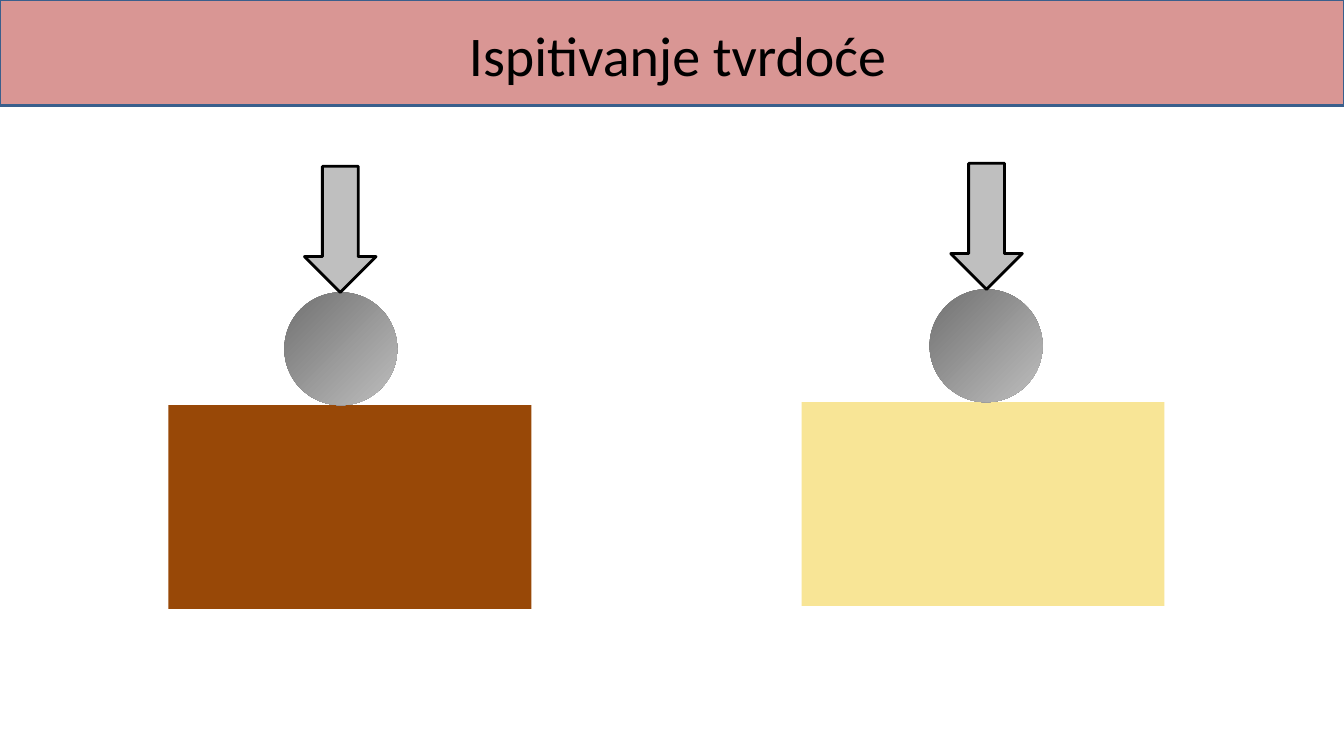
from pptx import Presentation
from pptx.dml.color import RGBColor
from pptx.enum import shapes, text
from pptx.util import Inches, Pt

KIND = shapes.MSO_SHAPE


def color(code):
    return RGBColor.from_string(code)


def draw(kind, left, top, width, height, fill=None, line=None):
    """Add a shape; without a fill code its fill is left to the caller."""
    shape = slide.shapes.add_shape(
        kind, Inches(left), Inches(top), Inches(width), Inches(height))
    shape.shadow.inherit = False
    if fill:
        shape.fill.solid()
        shape.fill.fore_color.rgb = color(fill)
    if line:
        shape.line.color.rgb = color(line)
        shape.line.width = Pt(2)
    else:
        shape.line.fill.background()
    return shape


deck = Presentation()
deck.slide_width = Inches(13.33)
deck.slide_height = Inches(7.5)
slide = deck.slides.add_slide(deck.slide_layouts[6])

# Title band
draw(KIND.RECTANGLE, 0, 0, 13.33, 1.05, "D99694", "3A5F8C")
title = slide.shapes.add_textbox(Inches(0.97), 0, Inches(11.5), Inches(1.07))
frame = title.text_frame
frame.word_wrap = True
frame.vertical_anchor = text.MSO_ANCHOR.MIDDLE
para = frame.paragraphs[0]
para.alignment = text.PP_ALIGN.CENTER
run = para.add_run()
run.text = "Ispitivanje tvrdoće"
run.font.name = "Calibri"
run.font.size = Pt(40)
run.font.color.rgb = color("000000")

# Two hardness tests: an arrow presses a ball onto a block
tests = [
    (1.67, 2.82, 2.75, 4.02, "984807"),
    (7.95, 9.22, 9.16, 3.99, "F8E596"),
]
for block_x, ball_x, arrow_x, top, fill in tests:
    draw(KIND.RECTANGLE, block_x, top, 3.6, 2.02, fill)

    ball = draw(KIND.FLOWCHART_CONNECTOR, ball_x, top - 1.12, 1.12, 1.12)
    ball.fill.gradient()
    ball.fill.gradient_angle = 315
    for stop, shade in zip(ball.fill.gradient_stops, ("717171", "BEBEBE")):
        stop.color.rgb = color(shade)

    arrow = draw(KIND.LEFT_ARROW, arrow_x, top - 2.1, 1.25, 0.71,
                 "BFBFBF", "000000")
    arrow.rotation = 270

deck.save("out.pptx")
